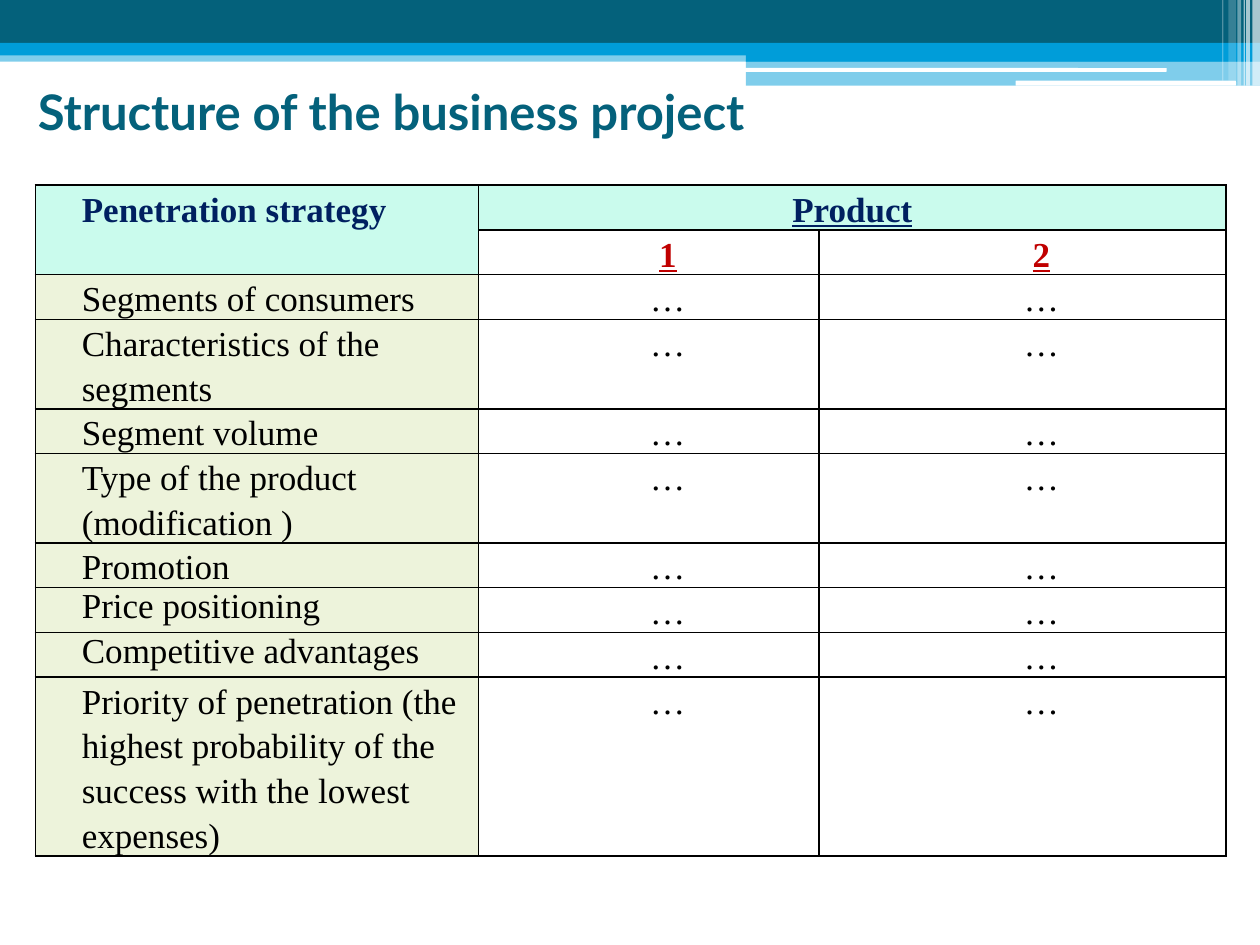
from lxml.etree import SubElement
from pptx import Presentation
from pptx.dml.color import RGBColor
from pptx.enum.shapes import MSO_SHAPE
from pptx.enum.text import MSO_ANCHOR, MSO_AUTO_SIZE, PP_ALIGN
from pptx.oxml.ns import qn
from pptx.util import Inches, Pt

COLORS = {
    "teal": "04617B", "blue": "009DD9", "white": "FFFFFF", "black": "000000",
    "navy": "002060", "red": "C00000", "mint": "CAFBED", "olive": "EDF3DB",
}


def rgb(name):
    return RGBColor.from_string(COLORS[name])


def write(tf, text, size=20, font="Times New Roman", color="black", bold=False,
          underline=False, align=PP_ALIGN.LEFT, indent=0, spacing=1.15, after=10):
    p = tf.paragraphs[0]
    p.alignment, p.line_spacing, p.space_after = align, spacing, Pt(after)
    pPr = p._p.get_or_add_pPr()
    pPr.set("marL", str(Inches(indent)))
    pPr.set("indent", "0")
    r = p.add_run()
    r.text = text
    r.font.size, r.font.name = Pt(size), font
    r.font.bold, r.font.underline = bold, underline
    r.font.color.rgb = rgb(color)


prs = Presentation()
prs.slide_width, prs.slide_height = Inches(10), Inches(7.5)
s = prs.slides.add_slide(prs.slide_layouts[5])

# Header bands: left, top, width, height, colour, opacity in percent
RECT, ROUND = MSO_SHAPE.RECTANGLE, MSO_SHAPE.ROUNDED_RECTANGLE
bands = [
    (RECT, 0, 0.4, 10, 0.09, "blue", 50),
    (RECT, 0, 0, 10, 0.34, "teal", 100),
    (RECT, 0, 0.34, 10, 0.1, "blue", 100),
    (RECT, 5.92, 0.39, 4.08, 0.1, "blue", 100),
    (RECT, 5.92, 0.48, 4.08, 0.2, "blue", 50),
    (ROUND, 5.91, 0.54, 3.35, 0.03, "white", 100),
    (ROUND, 8.06, 0.64, 1.75, 0.04, "white", 100),
]
stripes = [
    (9.94, 0.06, 0.68, 65), (9.89, 0.03, 0.68, 65), (9.87, 0.01, 0.68, 60),
    (9.82, 0.03, 0.68, 40), (9.75, 0.06, 0.64, 20), (9.7, 0.01, 0.64, 30),
]
bands += [(RECT, x, 0, w, h, "white", opacity) for x, w, h, opacity in stripes]
for kind, x, y, w, h, color, opacity in bands:
    sp = s.shapes.add_shape(kind, Inches(x), Inches(y), Inches(w), Inches(h))
    sp.shadow.inherit = False
    sp.fill.solid()
    sp.fill.fore_color.rgb = rgb(color)
    sp.line.fill.background()
    if opacity < 100:
        clr = sp._element.spPr.find(".//" + qn("a:srgbClr"))
        SubElement(clr, qn("a:alpha"), val=str(opacity * 1000))

# Title
title = s.shapes.title
title.left, title.top = Inches(0.2), Inches(0.6)
title.width, title.height = Inches(6.28), Inches(0.57)
tf = title.text_frame
tf.word_wrap, tf.auto_size = True, MSO_AUTO_SIZE.NONE
tf.vertical_anchor = MSO_ANCHOR.TOP
write(tf, "Structure of the business project", size=28, font="Lato",
      color="teal", bold=True, spacing=1, after=0)

# Table: row label and the number of text lines it takes
criteria = [
    ("Segments of consumers", 1),
    ("Characteristics of the segments", 2),
    ("Segment volume", 1),
    ("Type of the product (modification )", 2),
    ("Promotion", 1),
    ("Price positioning", 1),
    ("Competitive advantages", 1),
    ("Priority of penetration (the highest probability of the success "
     "with the lowest expenses)", 4),
]
single_spaced = {"Price positioning", "Competitive advantages"}
line_height = 0.355
lines = [1, 1] + [n for _, n in criteria]
table = s.shapes.add_table(len(lines), 3, Inches(0.28), Inches(1.47), Inches(9.45),
                           Inches(line_height * sum(lines))).table
for col, width in zip(table.columns, (3.52, 2.7, 3.23)):
    col.width = Inches(width)
for row, n in zip(table.rows, lines):
    row.height = Inches(line_height * n)

for r, row in enumerate(table.rows):
    for c, cell in enumerate(row.cells):
        cell.margin_left = cell.margin_right = Inches(0.07)
        cell.margin_top = cell.margin_bottom = 0
        tcPr = cell._tc.get_or_add_tcPr()
        for side in ("lnL", "lnR", "lnT", "lnB"):
            ln = SubElement(tcPr, qn("a:" + side), w=str(Pt(1)))
            fill = SubElement(ln, qn("a:solidFill"))
            SubElement(fill, qn("a:srgbClr"), val=COLORS["black"])
        if r == 0 or c == 0:
            cell.fill.solid()
            cell.fill.fore_color.rgb = rgb("mint" if r < 2 else "olive")
        else:
            cell.fill.background()

table.cell(0, 0).merge(table.cell(1, 0))
table.cell(0, 1).merge(table.cell(0, 2))
write(table.cell(0, 0).text_frame, "Penetration strategy", color="navy", bold=True,
      align=PP_ALIGN.JUSTIFY, indent=0.3)
write(table.cell(0, 1).text_frame, "Product", color="navy", bold=True,
      underline=True, align=PP_ALIGN.CENTER)
for c in (1, 2):
    write(table.cell(1, c).text_frame, str(c), color="red", bold=True,
          underline=True, align=PP_ALIGN.CENTER, indent=0.3)
for r, (label, _) in enumerate(criteria, start=2):
    tight = label in single_spaced
    write(table.cell(r, 0).text_frame, label, indent=0.3,
          spacing=1 if tight else 1.15, after=0 if tight else 10)
    for c in (1, 2):
        write(table.cell(r, c).text_frame, "…", align=PP_ALIGN.CENTER, indent=0.3)

prs.save("out.pptx")
